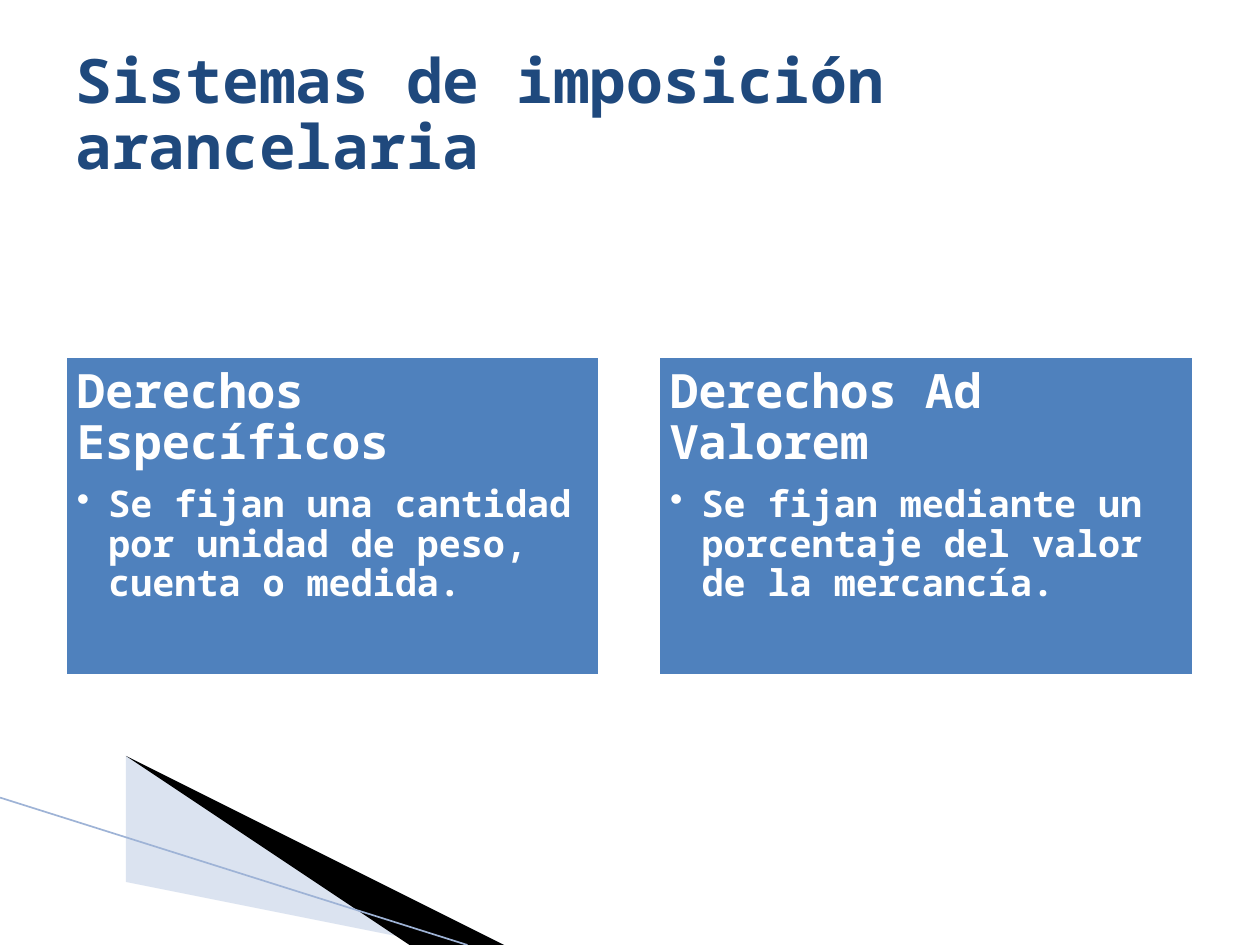
import pptx
import pptx.dml.color
import pptx.enum.shapes
import pptx.enum.text
import pptx.oxml
import pptx.oxml.ns
import pptx.util
from lxml import etree

Inches = pptx.util.Inches
Pt = pptx.util.Pt
RGBColor = pptx.dml.color.RGBColor
qn = pptx.oxml.ns.qn

WIDTH, HEIGHT = 10, 7.5
MARGIN = 0.5
CARD_WIDTH, CARD_HEIGHT, CARD_TOP = 4.28, 2.57, 2.81
CARD_STEP = 1.1 * CARD_WIDTH  # a card and a gap of a tenth of its width
FONT = "Noto Sans Mono"

NAVY = RGBColor(0x1F, 0x49, 0x7D)
BLUE = RGBColor(0x4F, 0x81, 0xBD)
PALE_BLUE = RGBColor(0xA7, 0xB9, 0xDB)
LINE_BLUE = RGBColor(0x9E, 0xB3, 0xD6)
BLACK = RGBColor(0, 0, 0)
WHITE = RGBColor(255, 255, 255)

CARDS = [
    ("Derechos Específicos",
     "Se fijan una cantidad por unidad de peso, cuenta o medida."),
    ("Derechos Ad Valorem",
     "Se fijan mediante un porcentaje del valor de la mercancía."),
]


def write(paragraph, text, size, color):
    paragraph.alignment = pptx.enum.text.PP_ALIGN.LEFT
    paragraph.line_spacing = 0.9
    run = paragraph.add_run()
    run.text = text
    run.font.name = FONT
    run.font.size = Pt(size)
    run.font.bold = True
    run.font.color.rgb = color


def add_bullet(paragraph, indent):
    properties = paragraph._p.get_or_add_pPr()
    properties.set("marL", str(Inches(indent)))
    properties.set("indent", str(-Inches(indent)))
    etree.SubElement(properties, qn("a:buChar")).set("char", "•")


def add_wedge(slide, points, color, opacity=None):
    builder = slide.shapes.build_freeform(*points[0], scale=float(Inches(1)))
    builder.add_line_segments(points[1:], close=True)
    shape = builder.convert_to_shape()
    shape.shadow.inherit = False
    shape.line.fill.background()
    shape.fill.solid()
    shape.fill.fore_color.rgb = color
    if opacity is not None:
        color_element = shape.fill._xPr.find(".//" + qn("a:srgbClr"))
        alpha = etree.SubElement(color_element, qn("a:alpha"))
        alpha.set("val", str(opacity * 1000))


def add_corner(slide, left, top, bottom):
    """Draw the swoosh that runs from the left edge to the bottom edge."""
    tip = top + 0.17
    add_wedge(slide, [(left + 0.55, tip + 0.01), (left + 5.95, bottom),
                      (left + 4.56, bottom), (left + 0.55, tip)], PALE_BLUE, 40)
    add_wedge(slide, [(left + 0.53, tip - 0.01), (left + 4.57, bottom),
                      (left + 3.72, bottom), (left + 0.54, tip)], BLACK)
    line = slide.shapes.add_connector(
        pptx.enum.shapes.MSO_CONNECTOR.STRAIGHT,
        Inches(left), Inches(top), Inches(left + 3.71), Inches(bottom))
    line.line.color.rgb = LINE_BLUE
    line.line.width = Pt(0.95)
    etree.SubElement(line._element.spPr, qn("a:effectLst"))


def add_title(slide, left, top, width, height):
    box = slide.shapes.add_textbox(*map(Inches, (left, top, width, height)))
    frame = box.text_frame
    frame.word_wrap = True
    frame.vertical_anchor = pptx.enum.text.MSO_ANCHOR.MIDDLE
    write(frame.paragraphs[0], "Sistemas de imposición arancelaria", 35, NAVY)


def add_card(slide, left, top, width, height, heading, detail):
    card = slide.shapes.add_shape(
        pptx.enum.shapes.MSO_SHAPE.RECTANGLE,
        *map(Inches, (left, top, width, height)))
    card.shadow.inherit = False
    card.fill.solid()
    card.fill.fore_color.rgb = BLUE
    card.line.color.rgb = WHITE
    card.line.width = Pt(4.33)

    frame = card.text_frame
    frame.word_wrap = True
    frame.vertical_anchor = pptx.enum.text.MSO_ANCHOR.TOP
    frame.margin_left = frame.margin_right = Inches(0.11)
    frame.margin_top = frame.margin_bottom = Inches(0.11)
    title = frame.paragraphs[0]
    title.space_after = Pt(9)
    write(title, heading, 27, WHITE)
    body = frame.add_paragraph()
    body.level = 1
    add_bullet(body, 0.25)
    write(body, detail, 21, WHITE)


def main():
    presentation = pptx.Presentation()
    presentation.slide_width = Inches(WIDTH)
    presentation.slide_height = Inches(HEIGHT)
    slide = presentation.slides.add_slide(presentation.slide_layouts[6])
    slide.background.fill.solid()
    slide.background.fill.fore_color.rgb = WHITE

    add_corner(slide, 0, 6.33, HEIGHT)
    add_title(slide, MARGIN, 0.3, WIDTH - 2 * MARGIN, 1.25)
    for column, (heading, detail) in enumerate(CARDS):
        add_card(slide, MARGIN + column * CARD_STEP, CARD_TOP,
                 CARD_WIDTH, CARD_HEIGHT, heading, detail)
    presentation.save("out.pptx")


if __name__ == "__main__":
    main()
